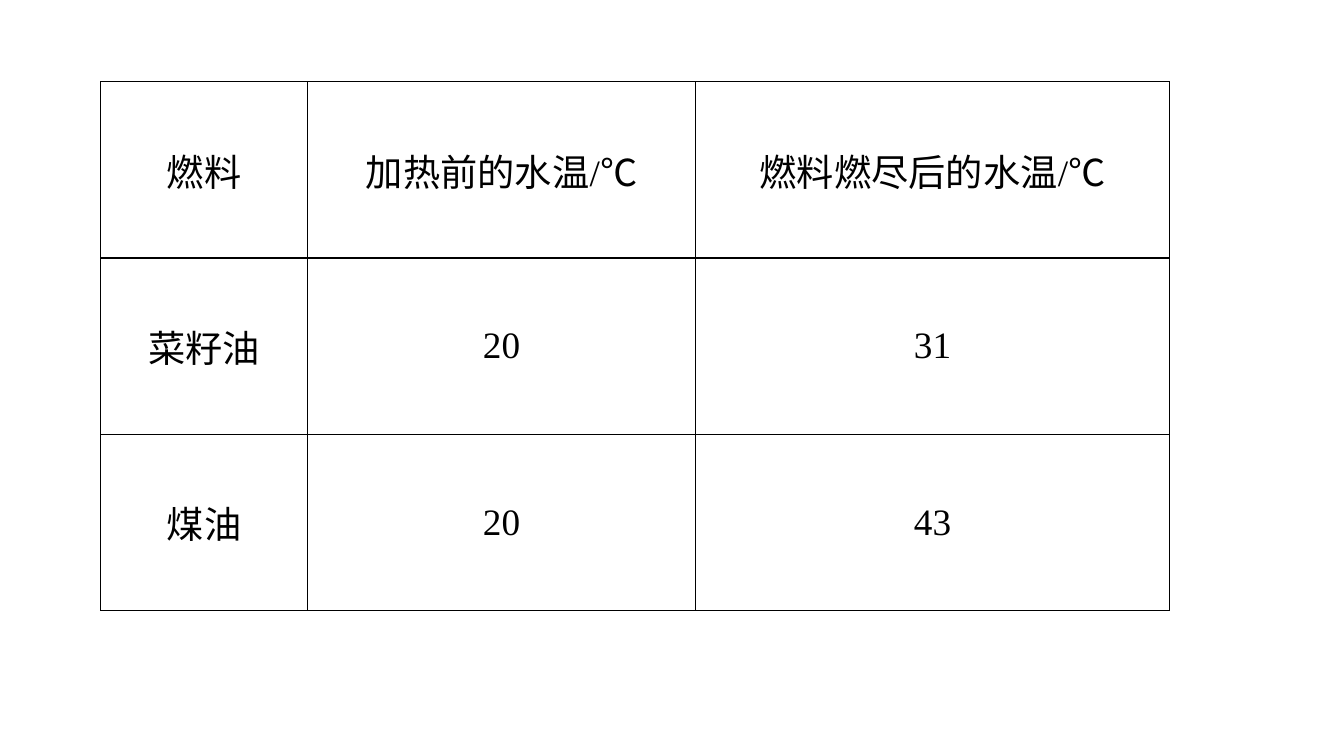
from lxml import etree
from pptx import Presentation
from pptx.dml.color import RGBColor
from pptx.enum.text import MSO_ANCHOR, PP_ALIGN
from pptx.oxml.ns import qn
from pptx.util import Inches, Pt

MIDDLE = MSO_ANCHOR.MIDDLE
CENTER = PP_ALIGN.CENTER
BLACK = RGBColor(0, 0, 0)
LATIN = "Times New Roman"
HAN = "Noto Sans CJK SC"
SIZE = Pt(26.6)
EDGE = Pt(1)
WIDTHS = [2.05, 3.85, 4.7]
HEIGHT = 1.75
DEGREE = ("℃", HAN)
ROWS = [
    [
        [("燃料", LATIN)],
        [("加热前的水温/", LATIN), DEGREE],
        [("燃料燃尽后的水温/", LATIN), DEGREE],
    ],
    [[("菜籽油", LATIN)], [("20", LATIN)], [("31", LATIN)]],
    [[("煤油", LATIN)], [("20", LATIN)], [("43", LATIN)]],
]


def add_run(para, text, face):
    run = para.add_run()
    run.text = text
    font = run.font
    font.size = SIZE
    font.color.rgb = BLACK
    font.name = face
    han = etree.SubElement(run._r.get_or_add_rPr(), qn("a:ea"))
    han.set("typeface", HAN)


def add_edges(cell):
    props = cell._tc.get_or_add_tcPr()
    for side in ("lnL", "lnR", "lnT", "lnB"):
        line = etree.SubElement(props, qn(f"a:{side}"), w=str(EDGE))
        fill = etree.SubElement(line, qn("a:solidFill"))
        etree.SubElement(fill, qn("a:srgbClr"), val=str(BLACK))


def fill_cell(cell, runs):
    add_edges(cell)
    cell.fill.background()
    cell.vertical_anchor = MIDDLE
    cell.margin_left = cell.margin_right = Inches(0.13)
    cell.margin_top = cell.margin_bottom = Inches(0.07)
    para = cell.text_frame.paragraphs[0]
    para.alignment = CENTER
    for text, face in runs:
        add_run(para, text, face)


def add_grid(slide, left, top):
    frame = slide.shapes.add_table(
        len(ROWS), len(WIDTHS), Inches(left), Inches(top),
        Inches(sum(WIDTHS)), Inches(HEIGHT * len(ROWS)),
    )
    table = frame.table
    table.first_row = False
    table.horz_banding = False
    for col, width in zip(table.columns, WIDTHS):
        col.width = Inches(width)
    for row, items in zip(table.rows, ROWS):
        row.height = Inches(HEIGHT)
        for cell, runs in zip(row.cells, items):
            fill_cell(cell, runs)


def main():
    deck = Presentation()
    deck.slide_width = Inches(13.33)
    deck.slide_height = Inches(7.5)
    slide = deck.slides.add_slide(deck.slide_layouts[6])
    add_grid(slide, 1, 0.81)
    deck.save("out.pptx")


if __name__ == "__main__":
    main()
